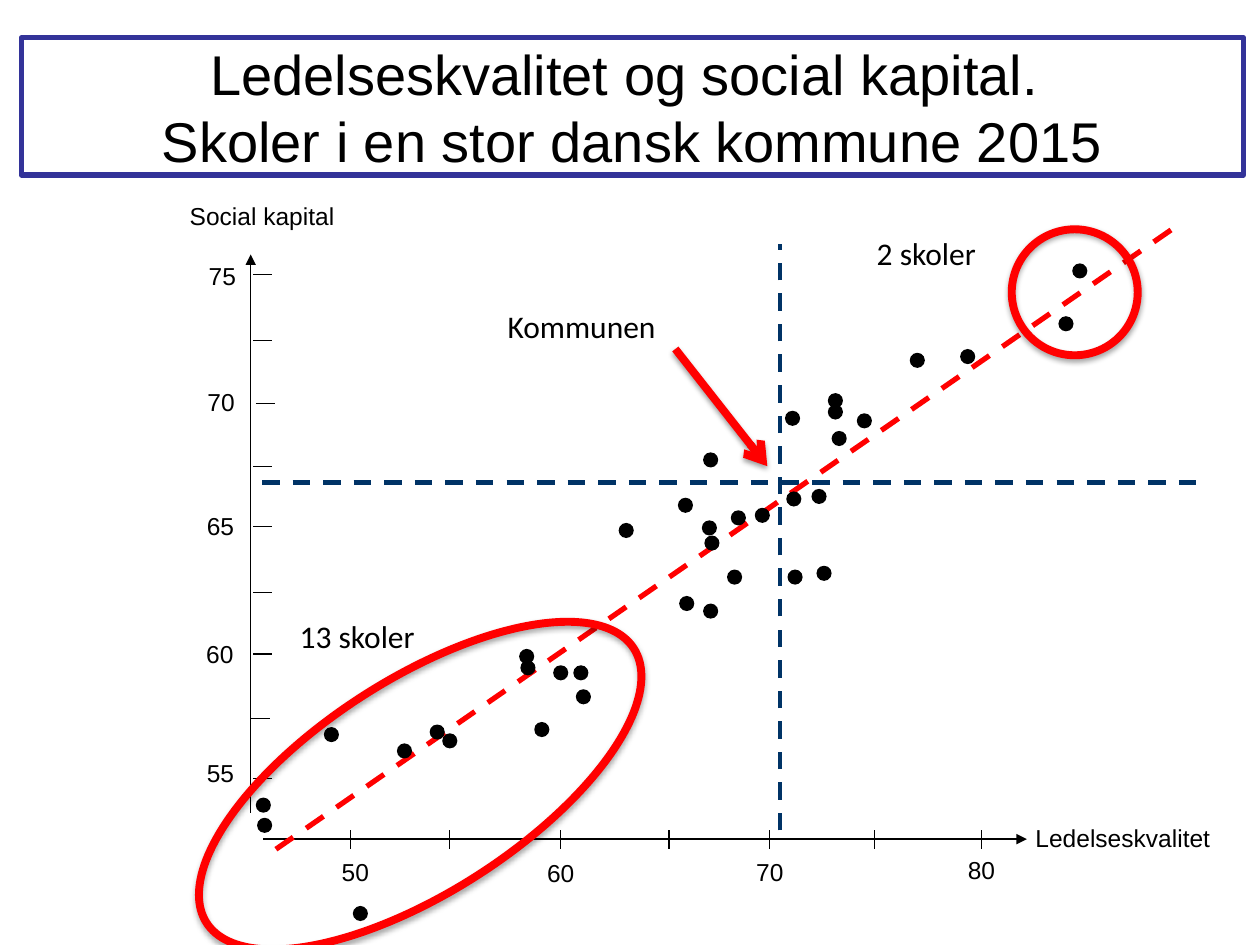
from dataclasses import dataclass
from typing import Optional

from lxml.etree import SubElement
from pptx import Presentation
from pptx.dml.color import RGBColor
from pptx.enum.dml import MSO_LINE
from pptx.enum.shapes import MSO_CONNECTOR, MSO_SHAPE
from pptx.enum.text import MSO_ANCHOR, PP_ALIGN
from pptx.oxml.ns import qn
from pptx.util import Pt

PX = 9144  # EMU per px, 100 px to the inch

BLACK = RGBColor(0x00, 0x00, 0x00)
RED = RGBColor(0xFF, 0x00, 0x00)
NAVY = RGBColor(0x00, 0x33, 0x66)
FRAME_BLUE = RGBColor(0x33, 0x33, 0x99)

DOT_SIZE = 12
TICK_LENGTH = 15


@dataclass(frozen=True)
class Line:
    x1: int
    y1: int
    x2: int
    y2: int
    color: RGBColor = BLACK
    width: float = 0.75
    dashed: bool = False
    arrowhead: Optional[str] = None
    shadow: bool = False


@dataclass(frozen=True)
class Label:
    text: str
    left: int
    top: int
    width: int
    height: int = 34
    align: PP_ALIGN = PP_ALIGN.CENTER
    font: str = "Arial"
    size: int = 14
    wrap: bool = True


@dataclass(frozen=True)
class Ring:
    left: int
    top: int
    width: int
    height: int
    rotation: float = 0


AXES = [
    Line(199, 645, 199, 202, arrowhead="triangle"),
    Line(209, 666, 815, 666, arrowhead="triangle"),
]
X_TICKS = [278, 357, 445, 531, 611, 694, 779]
Y_TICKS = [(201, 218), (201, 270), (203, 320), (201, 370), (201, 418),
           (201, 470), (201, 519), (199, 570), (201, 618)]
TICKS = [Line(x, 659, x, 659 + TICK_LENGTH) for x in X_TICKS] + [
    Line(x, y, x + TICK_LENGTH, y) for x, y in Y_TICKS]
GUIDES = [
    Line(619, 659, 619, 194, NAVY, 2.5, dashed=True),
    Line(208, 383, 949, 383, NAVY, 2.5, dashed=True),
    Line(219, 674, 933, 180, RED, 3, dashed=True),
]
MUNICIPALITY_ARROW = Line(536, 277, 609, 370, RED, 4.5, arrowhead="arrow", shadow=True)

# Left and top of each school's dot
SCHOOLS = [
    (203, 633), (204, 649), (257, 577), (280, 719), (315, 590), (341, 575),
    (351, 582), (412, 515), (413, 524), (424, 573), (439, 528), (455, 528),
    (457, 547), (491, 415), (538, 395), (539, 473), (557, 413), (558, 359),
    (558, 479), (559, 425), (577, 452), (580, 405), (599, 403), (623, 326),
    (624, 390), (625, 452), (644, 388), (648, 449), (657, 312), (657, 321),
    (660, 342), (680, 328), (722, 280), (762, 277), (840, 251), (851, 209),
]

RINGS = [Ring(132, 539, 403, 169, 327.3), Ring(803, 182, 100, 100)]

AXIS_LABELS = [
    Label("Social kapital", 104, 155, 208),
    Label("75", 152, 202, 49),
    Label("70", 151, 302, 49),
    Label("65", 148, 401, 54),
    Label("60", 152, 502, 45),
    Label("55", 153, 597, 44),
    Label("50", 259, 675, 46),
    Label("60", 422, 676, 46),
    Label("70", 588, 675, 46),
    Label("80", 756, 674, 46),
    Label("Ledelseskvalitet", 812, 648, 174, align=PP_ALIGN.LEFT),
]
CALLOUT_FORMAT = {"height": 40, "align": PP_ALIGN.LEFT, "font": "Calibri",
                  "size": 18, "wrap": False}
CALLOUTS = [
    Label("Kommunen", 393, 239, 139, **CALLOUT_FORMAT),
    Label("13 skoler", 228, 485, 113, **CALLOUT_FORMAT),
    Label("2 skoler", 686, 181, 101, **CALLOUT_FORMAT),
]
TITLE = "Ledelseskvalitet og social kapital. \nSkoler i en stor dansk kommune 2015"


def set_all(target, values: dict) -> None:
    for attribute, value in values.items():
        setattr(target, attribute, value)


def add_drop_shadow(effects, alpha: int, distance: int) -> None:
    shadow = SubElement(effects, qn("a:outerShdw"), blurRad="40000",
                        dist=str(distance), dir="5400000", rotWithShape="0")
    black = SubElement(shadow, qn("a:srgbClr"), val="000000")
    SubElement(black, qn("a:alpha"), val=str(alpha * 1000))


def draw_line(slide, line: Line) -> None:
    connector = slide.shapes.add_connector(
        MSO_CONNECTOR.STRAIGHT,
        *(n * PX for n in (line.x1, line.y1, line.x2, line.y2)))
    connector.line.color.rgb = line.color
    connector.line.width = Pt(line.width)
    if line.dashed:
        connector.line.dash_style = MSO_LINE.DASH
    properties = connector._element.spPr
    if line.arrowhead:
        SubElement(properties.find(qn("a:ln")), qn("a:tailEnd"), type=line.arrowhead)
    effects = SubElement(properties, qn("a:effectLst"))
    if line.shadow:
        add_drop_shadow(effects, alpha=38, distance=20000)


def add_plain_shape(slide, kind: MSO_SHAPE, left: int, top: int, width: int, height: int):
    """Add a preset shape without fill or shadow."""
    shape = slide.shapes.add_shape(kind, left * PX, top * PX, width * PX, height * PX)
    shape.shadow.inherit = False
    shape.fill.background()
    return shape


def draw_school(slide, left: int, top: int) -> None:
    dot = add_plain_shape(slide, MSO_SHAPE.OVAL, left, top, DOT_SIZE, DOT_SIZE)
    dot.fill.solid()
    dot.fill.fore_color.rgb = BLACK
    dot.line.fill.background()


def draw_ring(slide, ring: Ring) -> None:
    oval = add_plain_shape(slide, MSO_SHAPE.OVAL, ring.left, ring.top, ring.width, ring.height)
    oval.rotation = ring.rotation
    oval.line.color.rgb = RED
    oval.line.width = Pt(4.5)
    add_drop_shadow(oval._element.spPr.find(qn("a:effectLst")), alpha=35, distance=23000)


def write_text(frame, text: str, align: PP_ALIGN, font: str, size: int) -> None:
    frame.text = text
    for paragraph in frame.paragraphs:
        paragraph.alignment = align
        set_all(paragraph.runs[0].font, {"name": font, "size": Pt(size)})
        paragraph.runs[0].font.color.rgb = BLACK


def draw_label(slide, label: Label) -> None:
    box = slide.shapes.add_textbox(
        *(n * PX for n in (label.left, label.top, label.width, label.height)))
    box.text_frame.word_wrap = label.wrap
    write_text(box.text_frame, label.text, label.align, label.font, label.size)


def draw_title(slide) -> None:
    frame = add_plain_shape(slide, MSO_SHAPE.RECTANGLE, 17, 30, 970, 109)
    frame.line.color.rgb = FRAME_BLUE
    frame.line.width = Pt(3)
    set_all(frame.text_frame, {"word_wrap": True, "vertical_anchor": MSO_ANCHOR.MIDDLE})
    write_text(frame.text_frame, TITLE, PP_ALIGN.CENTER, "Arial", 32)


def main() -> None:
    presentation = Presentation()
    set_all(presentation, {"slide_width": 1000 * PX, "slide_height": 750 * PX})
    slide = presentation.slides.add_slide(presentation.slide_layouts[6])
    draw_title(slide)
    for line in AXES + TICKS + GUIDES:
        draw_line(slide, line)
    for label in AXIS_LABELS:
        draw_label(slide, label)
    for left, top in SCHOOLS:
        draw_school(slide, left, top)
    draw_line(slide, MUNICIPALITY_ARROW)
    for ring in RINGS:
        draw_ring(slide, ring)
    for label in CALLOUTS:
        draw_label(slide, label)
    presentation.save("out.pptx")


if __name__ == "__main__":
    main()
